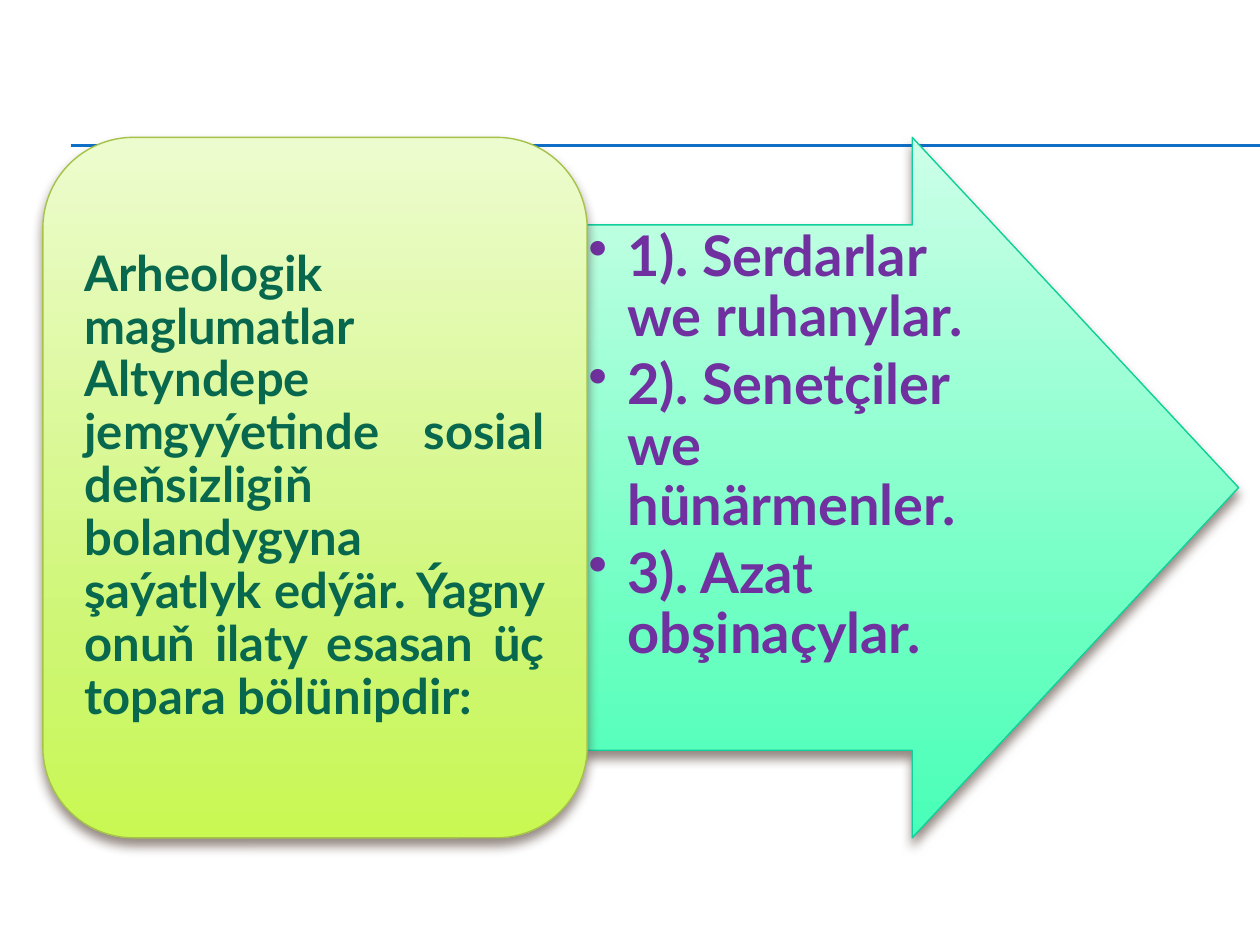
from dataclasses import dataclass

import pptx
import pptx.dml.color
import pptx.enum.shapes
import pptx.enum.text
import pptx.oxml
import pptx.oxml.ns
import pptx.util
from lxml import etree
from pptx.util import Inches

COLORS = {
    "rule": "0F6FC6",
    "shadow": "4E3B30",
    "topic_text": "08684E",
    "topic_line": "A5C249",
    "groups_text": "7030A0",
    "groups_line": "10CF9B",
}
TOPIC_GRADIENT = ((0, "EDFCCF"), (72, "CEF673"), (100, "C9F853"))
GROUPS_GRADIENT = ((0, "CDFFE8"), (72, "69FFC1"), (100, "48FFB8"))
FONT = "Lato"
PANEL_TOP, PANEL_HEIGHT = 1.09, 5.56


@dataclass
class Panel:
    preset: pptx.enum.shapes.MSO_SHAPE
    left: float
    width: float
    gradient: tuple[tuple[int, str], ...]
    line: str
    adjustments: tuple[float, ...]


@dataclass
class Passage:
    box: tuple[float, float, float, float]
    insets: tuple[float, float]
    paragraphs: tuple[str, ...]
    size: int
    color: str
    anchor: pptx.enum.text.MSO_ANCHOR
    align: pptx.enum.text.PP_ALIGN
    space_after: float = 0
    hanging: float = 0


SHAPES = pptx.enum.shapes.MSO_SHAPE
ANCHORS = pptx.enum.text.MSO_ANCHOR
ALIGNS = pptx.enum.text.PP_ALIGN

GROUPS_PANEL = Panel(SHAPES.RIGHT_ARROW, 4.65, 5.18, GROUPS_GRADIENT, "groups_line", (0.75, 0.5))
TOPIC_PANEL = Panel(SHAPES.ROUNDED_RECTANGLE, 0.34, 4.32, TOPIC_GRADIENT, "topic_line", (0.1667,))

GROUPS = Passage(
    (4.65, 1.79, 3.24, 4.17), (0.02, 0.02),
    ("1). Serdarlar we ruhanylar.",
     "2). Senetçiler we hünärmenler.",
     "3). Azat obşinaçylar."),
    32, "groups_text", ANCHORS.TOP, ALIGNS.LEFT, space_after=4, hanging=0.31,
)
TOPIC = Passage(
    (0.55, 1.3, 3.89, 5.13), (0.12, 0.06),
    ("Arheologik maglumatlar Altyndepe jemgyýetinde sosial deňsizligiň "
     "bolandygyna şaýatlyk edýär. Ýagny onuň ilaty esasan üç topara bölünipdir:",),
    28, "topic_text", ANCHORS.MIDDLE, ALIGNS.JUSTIFY,
)


def rgb(name: str) -> pptx.dml.color.RGBColor:
    return pptx.dml.color.RGBColor.from_string(COLORS[name])


def add_child(parent: etree._Element, tag: str, **attributes: str) -> etree._Element:
    return etree.SubElement(parent, pptx.oxml.ns.qn(tag), attributes)


def add_rule(slide: pptx.slide.Slide, y: float) -> None:
    rule = slide.shapes.add_connector(
        pptx.enum.shapes.MSO_CONNECTOR.STRAIGHT, Inches(0.56), Inches(y), Inches(10), Inches(y))
    rule.line.color.rgb = rgb("rule")
    rule.line.width = pptx.util.Pt(0.75)
    add_child(rule._element.spPr, "a:effectLst")


def add_panel(slide: pptx.slide.Slide, panel: Panel) -> None:
    """Draw a panel with a downward gradient and a soft shadow below it."""
    shape = slide.shapes.add_shape(
        panel.preset, Inches(panel.left), Inches(PANEL_TOP),
        Inches(panel.width), Inches(PANEL_HEIGHT))
    for index, value in enumerate(panel.adjustments):
        shape.adjustments[index] = value

    shape.fill.gradient()
    shape.fill.gradient_angle = 270
    properties = shape._element.spPr
    stops = properties.find(".//" + pptx.oxml.ns.qn("a:gsLst"))
    for stop in list(stops):
        stops.remove(stop)
    for percent, color in panel.gradient:
        stop = add_child(stops, "a:gs", pos=str(percent * 1000))
        add_child(stop, "a:srgbClr", val=color)

    shape.line.color.rgb = rgb(panel.line)
    shape.line.width = pptx.util.Pt(0.79)

    shape.shadow.inherit = False
    effects = properties.find(pptx.oxml.ns.qn("a:effectLst"))
    shadow = add_child(
        effects, "a:outerShdw", blurRad=str(pptx.util.Pt(6)), dist=str(pptx.util.Pt(4)),
        dir="5400000", rotWithShape="0")
    tint = add_child(shadow, "a:srgbClr", val=COLORS["shadow"])
    add_child(tint, "a:alpha", val="60000")


def add_passage(slide: pptx.slide.Slide, passage: Passage) -> None:
    frame = slide.shapes.add_textbox(*map(Inches, passage.box)).text_frame
    frame.word_wrap = True
    frame.vertical_anchor = passage.anchor
    frame.margin_left = frame.margin_right = Inches(passage.insets[0])
    frame.margin_top = frame.margin_bottom = Inches(passage.insets[1])
    for index, text in enumerate(passage.paragraphs):
        paragraph = frame.add_paragraph() if index else frame.paragraphs[0]
        paragraph.alignment = passage.align
        paragraph.line_spacing = 0.9
        paragraph.space_after = pptx.util.Pt(passage.space_after)
        if passage.hanging:
            properties = paragraph._p.get_or_add_pPr()
            properties.set("marL", str(Inches(passage.hanging)))
            properties.set("indent", str(-Inches(passage.hanging)))
            add_child(properties, "a:buChar", char="•")
        run = paragraph.add_run()
        run.text = text
        run.font.name = FONT
        run.font.size = pptx.util.Pt(passage.size)
        run.font.bold = True
        run.font.color.rgb = rgb(passage.color)


def main() -> None:
    presentation = pptx.Presentation()
    presentation.slide_width = Inches(10)
    presentation.slide_height = Inches(7.5)
    slide = presentation.slides.add_slide(presentation.slide_layouts[6])
    for y in (1.15, 1.16):
        add_rule(slide, y)
    for panel, passage in ((GROUPS_PANEL, GROUPS), (TOPIC_PANEL, TOPIC)):
        add_panel(slide, panel)
        add_passage(slide, passage)
    presentation.save("out.pptx")


if __name__ == "__main__":
    main()
